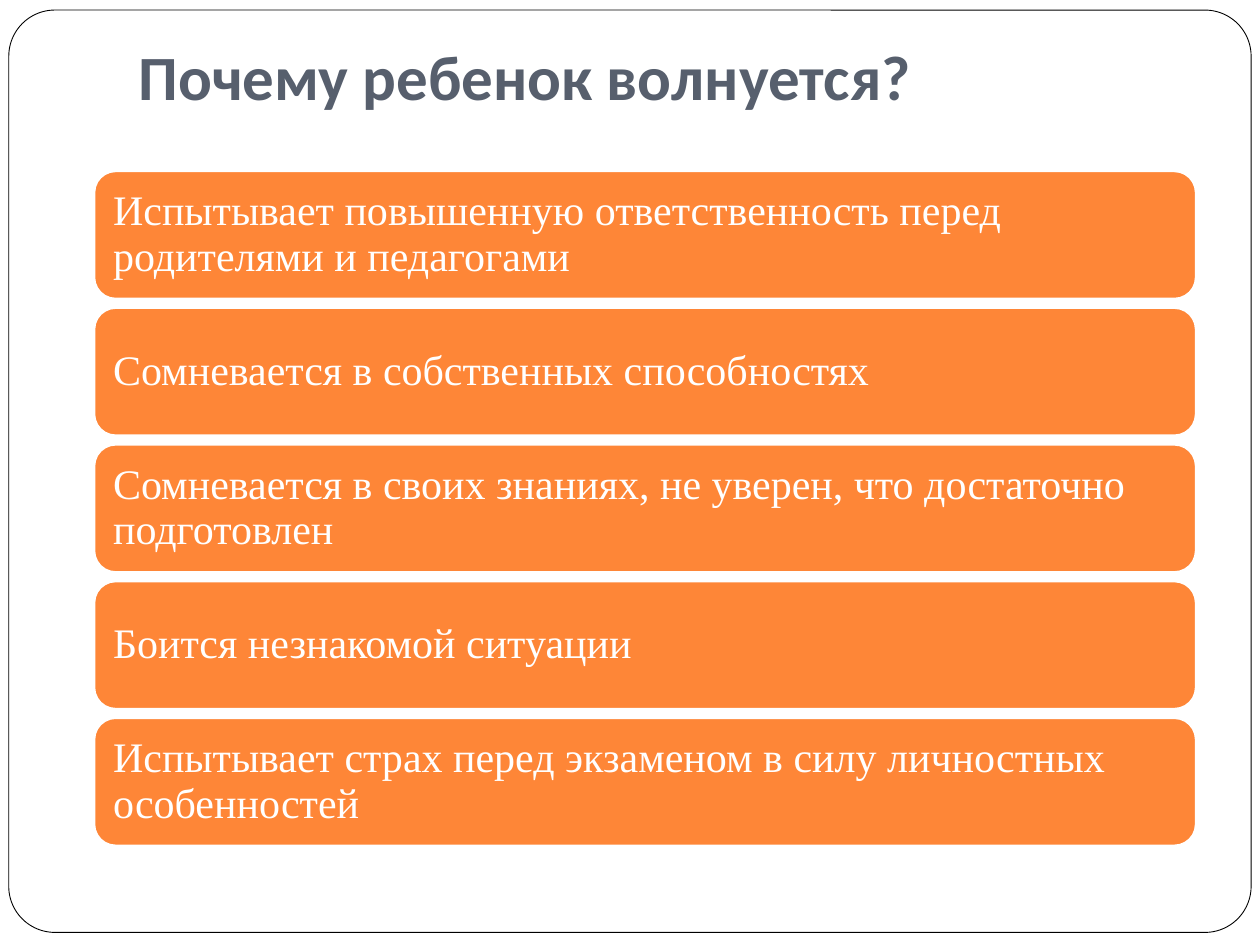
from pptx import Presentation
from pptx.dml.color import RGBColor
from pptx.enum.shapes import MSO_SHAPE
from pptx.enum.text import MSO_ANCHOR, MSO_AUTO_SIZE, PP_ALIGN
from pptx.util import Inches, Pt

TITLE = "Почему ребенок волнуется?"
REASONS = [
    "Испытывает повышенную ответственность перед родителями и педагогами",
    "Сомневается в собственных способностях",
    "Сомневается в своих знаниях, не уверен, что достаточно подготовлен",
    "Боится незнакомой ситуации",
    "Испытывает страх перед экзаменом в силу личностных особенностей",
]
CARD_HEIGHT = 1.01


def color(hex_value):
    return RGBColor.from_string(hex_value)


def set_font(p, name, size, hex_value, bold=False):
    p.font.name = name
    p.font.size = Pt(size)
    p.font.color.rgb = color(hex_value)
    p.font.bold = bold


def add_round_rect(slide, box, fill, line, line_width):
    sp = slide.shapes.add_shape(MSO_SHAPE.ROUNDED_RECTANGLE, *map(Inches, box))
    sp.shadow.inherit = False
    sp.fill.solid()
    sp.fill.fore_color.rgb = color(fill)
    sp.line.color.rgb = color(line)
    sp.line.width = Pt(line_width)
    return sp


def add_frame(slide, box):
    """Draw the rounded page border behind the title."""
    sp = add_round_rect(slide, box, "FFFFFF", "000000", 0.5)
    sp.adjustments[0] = 0.05
    slide.shapes.title.element.addprevious(sp.element)


def set_title(slide, box, text):
    sp = slide.shapes.title
    sp.left, sp.top, sp.width, sp.height = map(Inches, box)
    tf = sp.text_frame
    tf.text = text
    tf.word_wrap = True
    tf.auto_size = MSO_AUTO_SIZE.NONE
    tf.vertical_anchor = MSO_ANCHOR.TOP
    tf.margin_top = 0
    p = tf.paragraphs[0]
    p.alignment = PP_ALIGN.LEFT
    set_font(p, "Calibri", 36, "575F6D", bold=True)


def add_card(slide, box, text):
    sp = add_round_rect(slide, box, "FE8637", "FFFFFF", 1)
    tf = sp.text_frame
    tf.text = text
    tf.word_wrap = True
    tf.vertical_anchor = MSO_ANCHOR.MIDDLE
    tf.margin_left = tf.margin_right = Inches(0.1)
    tf.margin_top = tf.margin_bottom = Inches(0.1)
    p = tf.paragraphs[0]
    p.alignment = PP_ALIGN.LEFT
    p.line_spacing = 0.9
    set_font(p, "Times New Roman", 24, "FFFFFF")


def add_card_list(slide, box, texts):
    """Spread one card per text evenly from the top to the bottom of the box."""
    left, top, width, height = box
    step = (height - CARD_HEIGHT) / (len(texts) - 1)
    for i, text in enumerate(texts):
        add_card(slide, (left, top + i * step, width, CARD_HEIGHT), text)


def main():
    prs = Presentation()
    prs.slide_width, prs.slide_height = Inches(10), Inches(7.5)
    slide = prs.slides.add_slide(prs.slide_layouts[5])
    add_frame(slide, (0.07, 0.08, 9.86, 7.32))
    set_title(slide, (1, 0.3, 8.5, 1.25), TITLE)
    add_card_list(slide, (0.75, 1.36, 8.74, 5.35), REASONS)
    prs.save("out.pptx")


if __name__ == "__main__":
    main()
